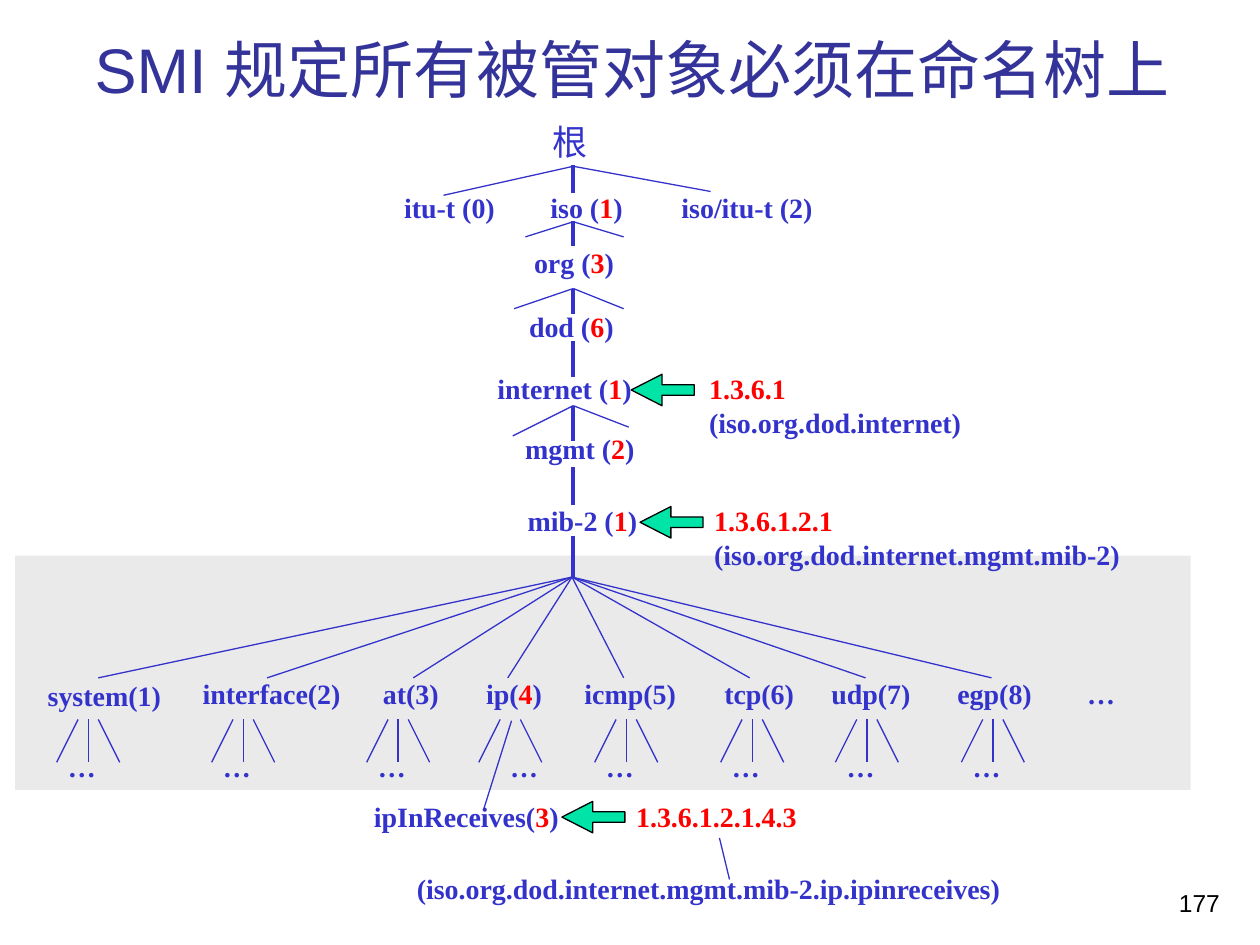
"""Build a slide that shows the SMI naming tree of managed objects."""
import pptx
import pptx.dml.color
import pptx.enum.shapes
import pptx.enum.text
import pptx.oxml
import pptx.oxml.ns
import pptx.util
from pptx.util import Inches

RGBColor = pptx.dml.color.RGBColor
BLUE = RGBColor(0x33, 0x33, 0xCC)
NAVY = RGBColor(0x33, 0x33, 0x99)
RED = RGBColor(0xFF, 0x00, 0x00)
GREEN = RGBColor(0x00, 0xE4, 0xA8)
GREY = RGBColor(0xEA, 0xEA, 0xEA)
BLACK = RGBColor(0x00, 0x00, 0x00)
ALIGN = pptx.enum.text.PP_ALIGN
ANCHOR = pptx.enum.text.MSO_ANCHOR
SHAPE = pptx.enum.shapes.MSO_SHAPE
STEM = 4.55


class Tree:
    serif = "Times New Roman"
    sans = "Arial"
    thin = 0.75
    thick = 2.25

    def __init__(self, slide):
        self.shapes = slide.shapes

    def label(self, text, left, top, width, height=0.37, size=16, bold=True, first=BLUE):
        """Add a one-line label whose parts, split by bars, alternate in colour."""
        frame = self.shapes.add_textbox(*map(Inches, (left, top, width, height))).text_frame
        frame.word_wrap = False
        frame.auto_size = pptx.enum.text.MSO_AUTO_SIZE.SHAPE_TO_FIT_TEXT
        para = frame.paragraphs[0]
        for i, part in enumerate(text.split("|")):
            run = para.add_run()
            run.text = part
            color = first if i % 2 == 0 else (RED if first == BLUE else BLUE)
            self.font(run, self.serif, size, color, bold)

    def block(self, text, box, size, color, align):
        """Add wrapped text that sits at the bottom of its box."""
        frame = self.shapes.add_textbox(*map(Inches, box)).text_frame
        frame.word_wrap = True
        frame.vertical_anchor = ANCHOR.BOTTOM
        frame.text = text
        para = frame.paragraphs[0]
        para.alignment = align
        self.font(para.runs[0], self.sans, size, color, False)

    def font(self, run, name, size, color, bold):
        """Format one run."""
        run.font.name = name
        run.font.size = pptx.util.Pt(size)
        run.font.bold = bold
        run.font.color.rgb = color

    def line(self, x1, y1, x2, y2, width=thin):
        """Add a straight branch."""
        kind = pptx.enum.shapes.MSO_CONNECTOR.STRAIGHT
        link = self.shapes.add_connector(kind, *map(Inches, (x1, y1, x2, y2)))
        link.line.color.rgb = BLUE
        link.line.width = pptx.util.Pt(width)
        props = link._element.spPr
        props.append(pptx.oxml.parse_xml(f"<a:effectLst {pptx.oxml.ns.nsdecls('a')}/>"))

    def shape(self, kind, box, fill):
        """Add a filled shape without outline."""
        item = self.shapes.add_shape(kind, *map(Inches, box))
        item.shadow.inherit = False
        item.fill.solid()
        item.fill.fore_color.rgb = fill
        item.line.fill.background()
        return item

    def arrow(self, left, top):
        """Add an outlined arrow that points left."""
        item = self.shape(SHAPE.LEFT_ARROW, (left, top, 0.5, 0.25), GREEN)
        item.adjustments[0] = 0.333
        item.adjustments[1] = 0.981
        item.line.color.rgb = BLACK
        item.line.width = pptx.util.Pt(self.thin)

    def fan(self, mid, dots, stem):
        """Add the branches below a group and their ellipsis."""
        for side in (-1, 1):
            self.line(mid + side * 0.08, 5.71, mid + side * 0.25, 6.05)
        if stem:
            self.line(mid, 5.71, mid, 6.05)
        self.label("…", dots, 5.9, 0.42)


def main():
    deck = pptx.Presentation()
    deck.slide_width, deck.slide_height = Inches(10), Inches(7.5)
    tree = Tree(deck.slides.add_slide(deck.slide_layouts[6]))

    tree.shape(SHAPE.RECTANGLE, (0.12, 4.41, 9.33, 1.86), GREY)
    tree.block("SMI 规定所有被管对象必须在命名树上", (0.52, 0.13, 8.99, 0.76), 36, NAVY, ALIGN.CENTER)
    tree.block("177", (7.7, 6.83, 2.08, 0.5), 14, BLACK, ALIGN.RIGHT)

    tree.label("根", 4.29, 0.91, 0.48, 0.43, 20, False)
    nodes = [
        ("itu-t (0)", 3.11, 1.46, 0.93),
        ("iso (|1|)", 4.27, 1.46, 0.78),
        ("iso/itu-t (2)", 5.31, 1.46, 1.25),
        ("org (|3|)", 4.14, 1.9, 0.84),
        ("dod (|6|)", 4.1, 2.41, 0.88),
        ("internet (|1|)", 3.85, 2.9, 1.27),
        ("mgmt (|2|)", 4.07, 3.38, 1.07),
        ("mib-2 (|1|)", 4.09, 3.95, 1.07),
        ("ipInReceives(|3|)", 2.87, 6.3, 1.73),
        ("(iso.org.dod.internet.mgmt.mib-2.ip.ipinreceives)", 3.21, 6.87, 4.86),
    ]
    for node in nodes:
        tree.label(*node)

    names = [
        ("1.3.6.1| (iso.org.dod.internet)", 5.53, 2.9, 2.86),
        ("1.3.6.1.2.1| (iso.org.dod.internet.mgmt.mib-2)", 5.57, 3.95, 4.41),
        ("1.3.6.1.2.1.4.3", 4.95, 6.3, 1.48),
    ]
    for name in names:
        tree.label(*name, first=RED)
    for spot in ((5.01, 2.97), (5.08, 4.02), (4.46, 6.36)):
        tree.arrow(*spot)

    trunk = [(1.31, 1.53), (1.75, 1.95), (2.29, 2.49), (2.71, 2.99),
             (3.22, 3.5), (3.71, 4.01), (4.25, 4.59)]
    for top, end in trunk:
        tree.line(STEM, top, STEM, end, tree.thick)
    forks = [
        (1.32, (3.52, 1.55), (5.64, 1.52)),
        (1.76, (4.17, 1.88), (4.95, 1.88)),
        (2.29, (4.08, 2.45), (4.95, 2.45)),
        (3.22, (4.07, 3.46), (4.99, 3.39)),
    ]
    for top, *ends in forks:
        for end in ends:
            tree.line(STEM, top, *end)

    groups = [
        ("system(1)", 0.28, 1.11, 0.78, 0.7),
        ("interface(2)", 1.51, 1.3, 2.12, 1.93),
        ("at(3)", 2.94, 0.65, 3.28, 3.16),
        ("ip(|4|)", 3.76, 0.65, 4.03, 4.05),
        ("icmp(5)", 4.54, 0.93, 4.95, 4.97),
        ("tcp(6)", 5.65, 0.76, 5.95, 5.97),
        ("udp(7)", 6.5, 0.83, 6.87, 6.88),
        ("egp(8)", 7.5, 0.8, 7.87, 7.88),
    ]
    for text, left, width, tip, mid in groups:
        is_ip = text.startswith("ip")
        tree.label(text, left, 5.34 if left < 1 else 5.32, width)
        tree.line(4.54, 4.58, tip, 5.38)
        tree.fan(mid, mid - (0.1 if is_ip else 0.26), not is_ip)
    tree.label("…", 8.53, 5.32, 0.42)
    tree.line(4.06, 5.72, 3.84, 6.42)
    tree.line(5.71, 6.65, 5.79, 6.98)

    deck.save("out.pptx")


if __name__ == "__main__":
    main()
